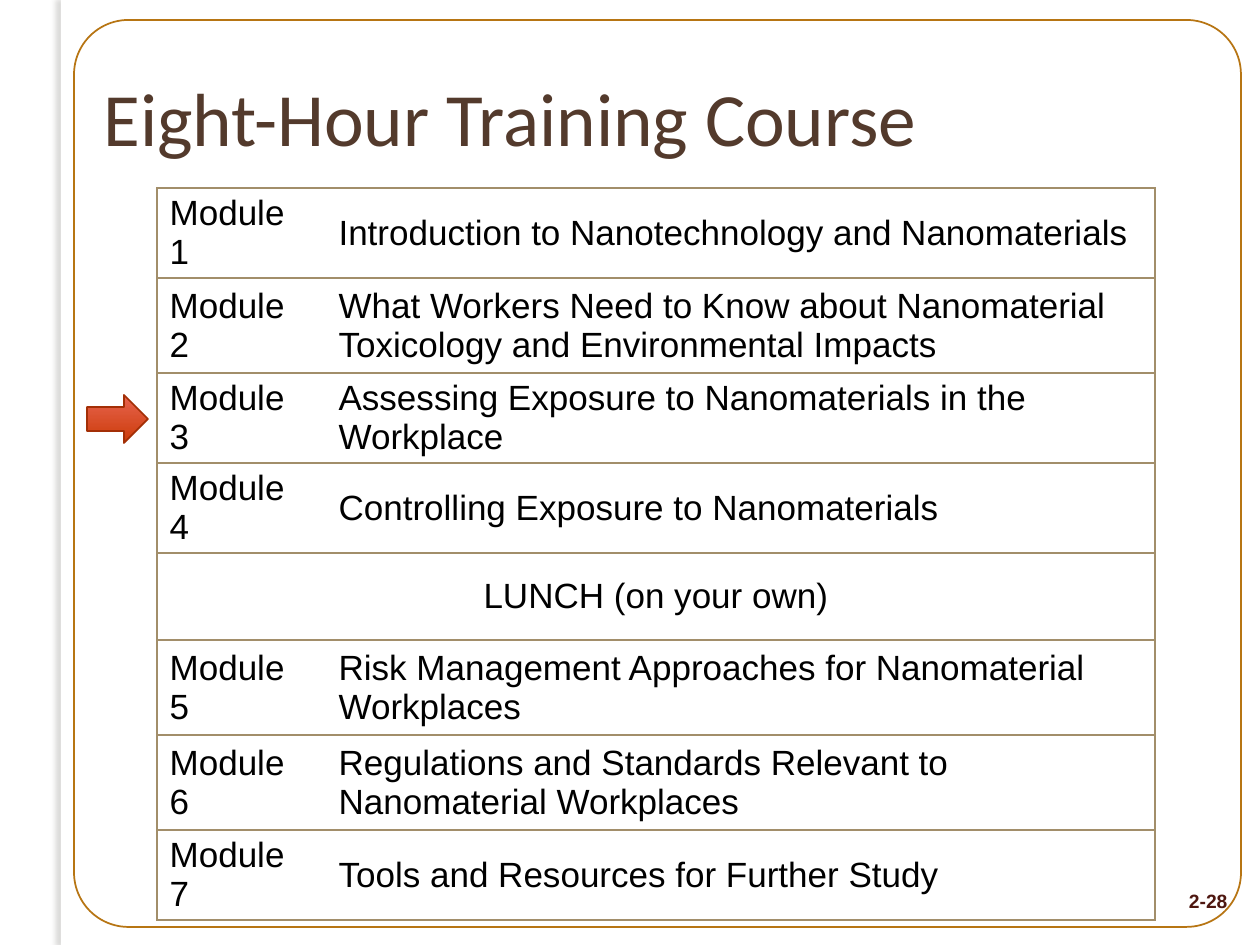
from dataclasses import dataclass
from typing import Any

from lxml import etree
from pptx import Presentation
from pptx import util as u
from pptx.dml.color import RGBColor
from pptx.enum import shapes as s, text as t
from pptx.oxml import parse_xml
from pptx.oxml.ns import qn

SCALE = 914400 / 126
NS = 'xmlns:a="http://schemas.openxmlformats.org/drawingml/2006/main"'
EDGE = "A28E6A"
COLS = (169, 829)
LOW, HIGH = 87, 95
PAD = 3


@dataclass
class Box:
    """A place on the slide in px."""
    x: int
    y: int
    w: int
    h: int

    def emu(self) -> list[int]:
        """Return the place in EMU."""
        return [px(v) for v in (self.x, self.y, self.w, self.h)]


@dataclass
class Row:
    """One line of the course plan."""
    name: str
    topic: str
    h: int = LOW


ROWS = [
    Row("Module 1", "Introduction to Nanotechnology and Nanomaterials"),
    Row("Module 2", "What Workers Need to Know about Nanomaterial "
        "Toxicology and Environmental Impacts", HIGH),
    Row("Module 3", "Assessing Exposure to Nanomaterials in the Workplace"),
    Row("Module 4", "Controlling Exposure to Nanomaterials"),
    Row("LUNCH (on your own)", ""),
    Row("Module 5", "Risk Management Approaches for Nanomaterial Workplaces", HIGH),
    Row("Module 6", "Regulations and Standards Relevant to "
        "Nanomaterial Workplaces", HIGH),
    Row("Module 7", "Tools and Resources for Further Study"),
]


def px(v: int) -> int:
    """Turn px into EMU."""
    return round(v * SCALE)


def rgb(code: str) -> RGBColor:
    """Turn a hex string into a colour."""
    return RGBColor.from_string(code)


def write(frame: Any, words: str, color: str, align: Any, **form: Any) -> None:
    """Write one paragraph with the given font values."""
    para = frame.paragraphs[0]
    para.alignment = align
    run = para.add_run()
    run.text = words
    run.font.color.rgb = rgb(color)
    for key, val in form.items():
        setattr(run.font, key, val)


def label(slide: Any, box: Box, words: str, color: str, align: Any, **form: Any) -> None:
    """Add a text box with middle anchor."""
    frame = slide.shapes.add_textbox(*box.emu()).text_frame
    frame.word_wrap = True
    frame.vertical_anchor = t.MSO_ANCHOR.MIDDLE
    write(frame, words, color, align, **form)


def shape(slide: Any, kind: Any, box: Box, fill: str = "", line: str = "") -> Any:
    """Add a preset shape without a theme shadow."""
    item = slide.shapes.add_shape(kind, *box.emu())
    item.shadow.inherit = False
    if fill:
        item.fill.solid()
        item.fill.fore_color.rgb = rgb(fill)
    else:
        item.fill.background()
    if line:
        item.line.color.rgb = rgb(line)
        item.line.width = u.Pt(1)
    else:
        item.line.fill.background()
    return item


def shade(item: Any) -> None:
    """Cast a soft shadow to the left."""
    root = item._element.spPr.find(qn("a:effectLst"))
    root.append(parse_xml(
        f'<a:outerShdw {NS} blurRad="38100" dist="38100" dir="10800000" rotWithShape="0">'
        '<a:srgbClr val="74726D"><a:alpha val="25000"/></a:srgbClr></a:outerShdw>'))


def border(cell: Any, sides: str) -> None:
    """Draw the named sides of a cell and clear the others."""
    prop = cell._tc.get_or_add_tcPr()
    for spot, side in enumerate("LRTB"):
        line = etree.Element(qn(f"a:ln{side}"), w=str(u.Pt(1)))
        if side in sides:
            fill = etree.SubElement(line, qn("a:solidFill"))
            etree.SubElement(fill, qn("a:srgbClr"), val=EDGE)
        else:
            etree.SubElement(line, qn("a:noFill"))
        prop.insert(spot, line)


def plan(slide: Any, x: int, y: int) -> None:
    """Add the table of modules."""
    box = Box(x, y, sum(COLS), sum(row.h for row in ROWS))
    table = slide.shapes.add_table(len(ROWS), len(COLS), *box.emu()).table
    table.first_row = table.horz_banding = False
    for col, wide in zip(table.columns, COLS):
        col.width = px(wide)
    for num, row in enumerate(ROWS):
        table.rows[num].height = px(row.h)
        left, right = table.cell(num, 0), table.cell(num, 1)
        for cell, words, sides in ((left, row.name, "LTB"), (right, row.topic, "RTB")):
            cell.fill.solid()
            cell.fill.fore_color.rgb = rgb("FFFFFF")
            cell.vertical_anchor = t.MSO_ANCHOR.MIDDLE
            cell.margin_top = cell.margin_bottom = px(PAD)
            border(cell, sides if row.topic else "LRTB")
            if words:
                align = t.PP_ALIGN.LEFT if row.topic else t.PP_ALIGN.CENTER
                write(cell.text_frame, words, "000000", align,
                      name="Arial", size=u.Pt(20))
        if not row.topic:
            left.merge(right)


def arrow(slide: Any, box: Box) -> None:
    """Add the arrow that marks the current module."""
    item = shape(slide, s.MSO_SHAPE.RIGHT_ARROW, box, line="A32F06")
    item.fill.gradient()
    item.fill.gradient_angle = 270
    for stop, code, spot in zip(item.fill.gradient_stops, ("E76450", "CC3B08"), (0, 1)):
        stop.color.rgb = rgb(code)
        stop.position = spot


def main() -> None:
    """Build the slide and save it."""
    deck = Presentation()
    deck.slide_width, deck.slide_height = px(1260), px(945)
    slide = deck.slides.add_slide(deck.slide_layouts[6])
    shade(shape(slide, s.MSO_SHAPE.RECTANGLE, Box(61, 0, 10, 945), "FFFFFF"))
    frame = shape(slide, s.MSO_SHAPE.ROUNDED_RECTANGLE, Box(74, 20, 1167, 907),
                  line="B77513")
    frame.adjustments[0] = 0.06
    label(slide, Box(1152, 882, 88, 37), "2-28", "4E1710", t.PP_ALIGN.RIGHT,
          name="Arial", size=u.Pt(11), bold=True)
    label(slide, Box(91, 38, 1140, 157), "Eight-Hour Training Course", "533A2C",
          t.PP_ALIGN.LEFT, name="Calibri", size=u.Pt(43))
    plan(slide, 157, 188)
    arrow(slide, Box(87, 395, 61, 48))
    deck.save("out.pptx")


if __name__ == "__main__":
    main()
